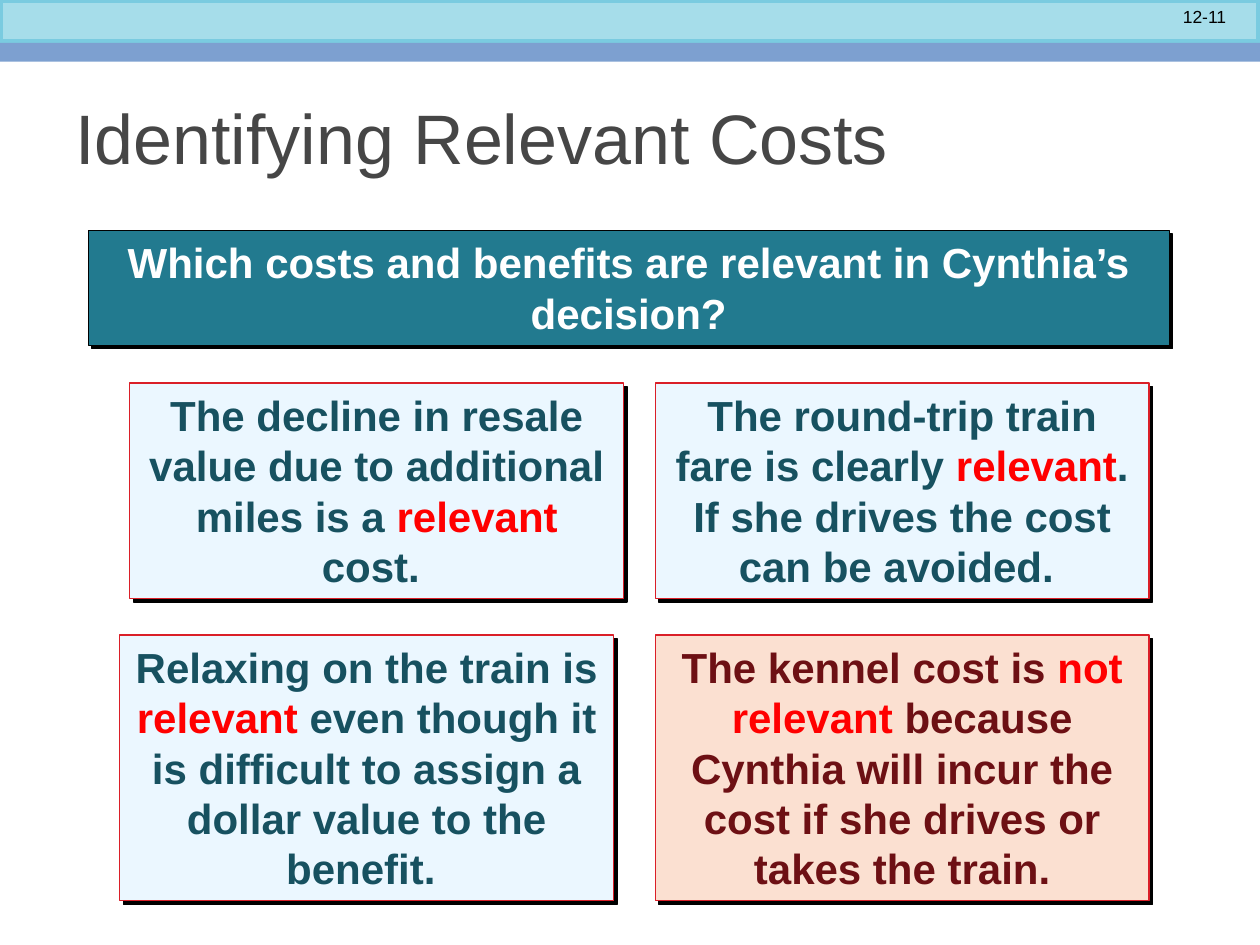
from lxml import etree
from pptx import Presentation
from pptx.dml.color import RGBColor
from pptx.enum.shapes import MSO_SHAPE
from pptx.enum.text import MSO_ANCHOR, PP_ALIGN
from pptx.oxml.ns import qn
from pptx.util import Inches, Pt

RECTANGLE = MSO_SHAPE.RECTANGLE
MIDDLE, TOP = MSO_ANCHOR.MIDDLE, MSO_ANCHOR.TOP
LEFT, CENTER, RIGHT = PP_ALIGN.LEFT, PP_ALIGN.CENTER, PP_ALIGN.RIGHT

BLACK = RGBColor(0x00, 0x00, 0x00)
WHITE = RGBColor(0xFF, 0xFF, 0xFF)
GRAY = RGBColor(0x46, 0x46, 0x46)
RED = RGBColor(0xFF, 0x00, 0x00)
BORDER_RED = RGBColor(0xDA, 0x1F, 0x28)
SKY = RGBColor(0xA6, 0xDD, 0xEA)
SKY_EDGE = RGBColor(0x7A, 0xCB, 0xE0)
PERIWINKLE = RGBColor(0x7D, 0xA0, 0xD0)
TEAL = RGBColor(0x22, 0x7A, 0x8F)
DARK_TEAL = RGBColor(0x17, 0x51, 0x60)
ICE = RGBColor(0xEB, 0xF7, 0xFF)
PEACH = RGBColor(0xFB, 0xE0, 0xD1)
MAROON = RGBColor(0x6D, 0x10, 0x14)


class SlideBuilder:
    """Draws styled elements on a slide measured in a grid of 100 columns by 75 rows."""

    font_name = "Arial"
    columns, rows = 100, 75

    def __init__(self, presentation):
        self.column = presentation.slide_width / self.columns
        self.row = presentation.slide_height / self.rows
        self.slide = presentation.slides.add_slide(presentation.slide_layouts[6])

    def place(self, left, top, width, height):
        return (round(left * self.column), round(top * self.row),
                round(width * self.column), round(height * self.row))

    def add_runs(self, shape, runs, size, align, anchor, bold=False):
        frame = shape.text_frame
        frame.word_wrap = True
        frame.vertical_anchor = anchor
        paragraph = frame.paragraphs[0]
        paragraph.alignment = align
        for text, color in runs:
            run = paragraph.add_run()
            run.text = text
            run.font.name = self.font_name
            run.font.size = Pt(size)
            run.font.bold = bold
            run.font.color.rgb = color

    def label(self, area, runs, size, align=LEFT, anchor=TOP):
        shape = self.slide.shapes.add_textbox(*self.place(*area))
        self.add_runs(shape, runs, size, align, anchor)

    def band(self, area, fill, line=None, line_width=0.75):
        shape = self.slide.shapes.add_shape(RECTANGLE, *self.place(*area))
        shape.shadow.inherit = False
        shape.fill.solid()
        shape.fill.fore_color.rgb = fill
        if line is None:
            shape.line.fill.background()
        else:
            shape.line.color.rgb = line
            shape.line.width = Pt(line_width)
        return shape

    def card(self, area, runs, fill, line):
        shape = self.band(area, fill, line)
        self.add_shadow(shape)
        self.add_runs(shape, runs, 24, CENTER, TOP, bold=True)

    def add_shadow(self, shape):
        effects = shape._element.spPr.find(qn("a:effectLst"))
        shadow = etree.SubElement(effects, qn("a:outerShdw"), blurRad="0",
                                  dist=str(Pt(2.8)), dir="2700000",
                                  algn="ctr", rotWithShape="0")
        etree.SubElement(shadow, qn("a:srgbClr"), val=str(BLACK))


def main():
    presentation = Presentation()
    presentation.slide_width = Inches(10)
    presentation.slide_height = Inches(7.5)
    builder = SlideBuilder(presentation)

    builder.band((0, 0, 100, 3.4), SKY, SKY_EDGE, 4)
    builder.band((0, 4, 100, 0.9), PERIWINKLE)
    builder.band((0, 3.4, 100, 1), PERIWINKLE)
    builder.label((85, 0, 13.3, 2.7), [("12-11", BLACK)], 10, RIGHT)
    builder.label((5, 5, 90, 11.7), [("Identifying Relevant Costs", GRAY)], 40, anchor=MIDDLE)

    card_width, right_column = 39.2, 52
    upper, lower = (30.4, 17.1), (50.4, 21.1)
    cards = [
        (10.3, upper, ICE, DARK_TEAL,
         "The decline in resale value due to additional miles is a ", "relevant", " cost. "),
        (right_column, upper, ICE, DARK_TEAL,
         "The round-trip train fare is clearly ", "relevant",
         ". If she drives the cost can be avoided. "),
        (9.5, lower, ICE, DARK_TEAL,
         "Relaxing on the train is ", "relevant",
         " even though it is difficult to assign a dollar value to the benefit. "),
        (right_column, lower, PEACH, MAROON,
         "The kennel cost is ", "not relevant",
         " because Cynthia will incur the cost if she drives or takes the train."),
    ]
    for left, (top, height), fill, color, before, verdict, after in cards:
        builder.card((left, top, card_width, height),
                     [(before, color), (verdict, RED), (after, color)], fill, BORDER_RED)

    question = "Which costs and benefits are relevant in Cynthia’s decision?"
    builder.card((7, 18.3, 85.8, 9.1), [(question, WHITE)], TEAL, BLACK)

    presentation.save("out.pptx")


if __name__ == "__main__":
    main()
